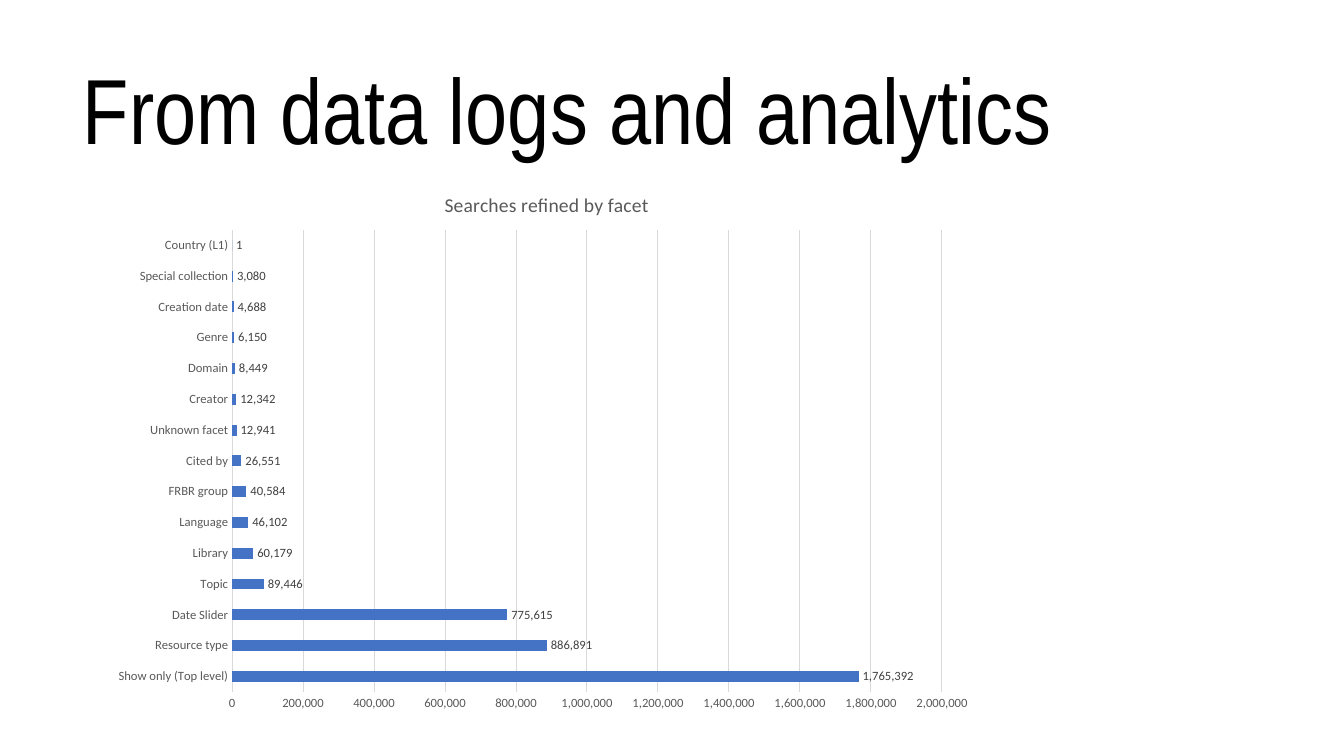
from typing import Any, NamedTuple

from lxml.etree import SubElement
from pptx import Presentation
from pptx.chart.data import CategoryChartData
from pptx.dml.color import RGBColor
from pptx.enum.chart import XL_CHART_TYPE, XL_LABEL_POSITION, XL_TICK_MARK
from pptx.enum.text import MSO_ANCHOR
from pptx.oxml.ns import qn
from pptx.util import Pt

EMU_PER_PX = 914400 / 100.8

BLACK = RGBColor(0x00, 0x00, 0x00)
BAR_BLUE = RGBColor(0x44, 0x72, 0xC4)
LABEL_GREY = RGBColor(0x40, 0x40, 0x40)
AXIS_GREY = RGBColor(0x59, 0x59, 0x59)
GRID_GREY = RGBColor(0xD9, 0xD9, 0xD9)
NUMBER_FORMAT = "#,##0"


class Area(NamedTuple):
    left: int
    top: int
    width: int
    height: int


class Facet(NamedTuple):
    name: str
    searches: int


HEADING_AREA = Area(73, 60, 1200, 120)
CHART_AREA = Area(102, 166, 884, 555)
PLOT_AREA = Area(232, 230, 710, 462)
TITLE_AREA = Area(441, 188, 204, 24)

FACETS = [
    Facet("Show only (Top level)", 1765392),
    Facet("Resource type", 886891),
    Facet("Date Slider", 775615),
    Facet("Topic", 89446),
    Facet("Library", 60179),
    Facet("Language", 46102),
    Facet("FRBR group", 40584),
    Facet("Cited by", 26551),
    Facet("Unknown facet", 12941),
    Facet("Creator", 12342),
    Facet("Domain", 8449),
    Facet("Genre", 6150),
    Facet("Creation date", 4688),
    Facet("Special collection", 3080),
    Facet("Country (L1)", 1),
]


def px(length: int) -> int:
    return round(length * EMU_PER_PX)


def set_values(target: Any, values: dict[str, Any]) -> None:
    for name, value in values.items():
        setattr(target, name, value)


def set_font(font: Any, name: str, size: int, color: RGBColor) -> None:
    set_values(font, {"name": name, "size": Pt(size), "bold": False})
    font.color.rgb = color


def set_line(line: Any) -> None:
    line.color.rgb = GRID_GREY
    line.width = Pt(0.75)


def place_in_chart(element: Any, area: Area, is_plot: bool) -> None:
    """Give a chart part a fixed place, as fractions of the chart."""
    for old_layout in element.findall(qn("c:layout")):
        element.remove(old_layout)
    layout = SubElement(element, qn("c:layout"))
    element.remove(layout)
    element.insert(0 if is_plot else 1, layout)
    manual = SubElement(layout, qn("c:manualLayout"))
    settings: dict[str, Any] = {"layoutTarget": "inner"} if is_plot else {}
    settings |= {
        "xMode": "edge",
        "yMode": "edge",
        "x": round((area.left - CHART_AREA.left) / CHART_AREA.width, 4),
        "y": round((area.top - CHART_AREA.top) / CHART_AREA.height, 4),
    }
    if is_plot:
        settings["w"] = round(area.width / CHART_AREA.width, 4)
        settings["h"] = round(area.height / CHART_AREA.height, 4)
    for name, value in settings.items():
        SubElement(manual, qn(f"c:{name}")).set("val", str(value))


def add_heading(page: Any, text: str) -> None:
    box = page.shapes.add_textbox(*map(px, HEADING_AREA))
    set_values(box.text_frame, {"word_wrap": True, "vertical_anchor": MSO_ANCHOR.TOP})
    para = box.text_frame.paragraphs[0]
    set_values(para, {"line_spacing": 0.9, "space_before": Pt(10)})
    span = para.add_run()
    span.text = text
    set_font(span.font, "Arial Narrow", 66, BLACK)


def add_facet_chart(page: Any, title: str) -> None:
    data = CategoryChartData(number_format=NUMBER_FORMAT)
    data.categories = [facet.name for facet in FACETS]
    data.add_series("Series 1", [facet.searches for facet in FACETS])
    chart = page.shapes.add_chart(
        XL_CHART_TYPE.BAR_CLUSTERED, *map(px, CHART_AREA), data
    ).chart
    chart.has_legend = False
    set_font(chart.font, "Calibri", 10, BLACK)

    # Chart title
    chart.has_title = True
    para = chart.chart_title.text_frame.paragraphs[0]
    span = para.add_run()
    span.text = title
    set_font(span.font, "Calibri", 14, AXIS_GREY)
    chart.chart_title.include_in_layout = False

    # Axes and grid
    for axis in (chart.category_axis, chart.value_axis):
        set_values(axis, {
            "major_tick_mark": XL_TICK_MARK.NONE,
            "minor_tick_mark": XL_TICK_MARK.NONE,
        })
        set_font(axis.tick_labels.font, "Calibri", 9, AXIS_GREY)
    set_line(chart.category_axis.format.line)
    value_axis = chart.value_axis
    set_values(value_axis, {
        "minimum_scale": 0,
        "maximum_scale": 2000000,
        "major_unit": 200000,
        "has_major_gridlines": True,
    })
    value_axis.format.line.fill.background()
    set_line(value_axis.major_gridlines.format.line)
    set_values(value_axis.tick_labels, {
        "number_format": NUMBER_FORMAT,
        "number_format_is_linked": False,
    })

    # Bars and their values
    plot = chart.plots[0]
    set_values(plot, {"gap_width": 182, "vary_by_categories": False})
    bars = plot.series[0]
    bars.format.fill.solid()
    bars.format.fill.fore_color.rgb = BAR_BLUE
    labels = bars.data_labels
    set_values(labels, {
        "show_value": True,
        "position": XL_LABEL_POSITION.OUTSIDE_END,
        "number_format": NUMBER_FORMAT,
        "number_format_is_linked": False,
    })
    set_font(labels.font, "Calibri", 9, LABEL_GREY)

    # Fixed places for the title and the plot
    chart_element = chart.element.find(qn("c:chart"))
    place_in_chart(chart_element.find(qn("c:title")), TITLE_AREA, False)
    place_in_chart(chart_element.find(qn("c:plotArea")), PLOT_AREA, True)


def main() -> None:
    deck = Presentation()
    set_values(deck, {"slide_width": px(1344), "slide_height": px(756)})
    page = deck.slides.add_slide(deck.slide_layouts[6])
    add_heading(page, "From data logs and analytics")
    add_facet_chart(page, "Searches refined by facet")
    deck.save("out.pptx")


if __name__ == "__main__":
    main()
